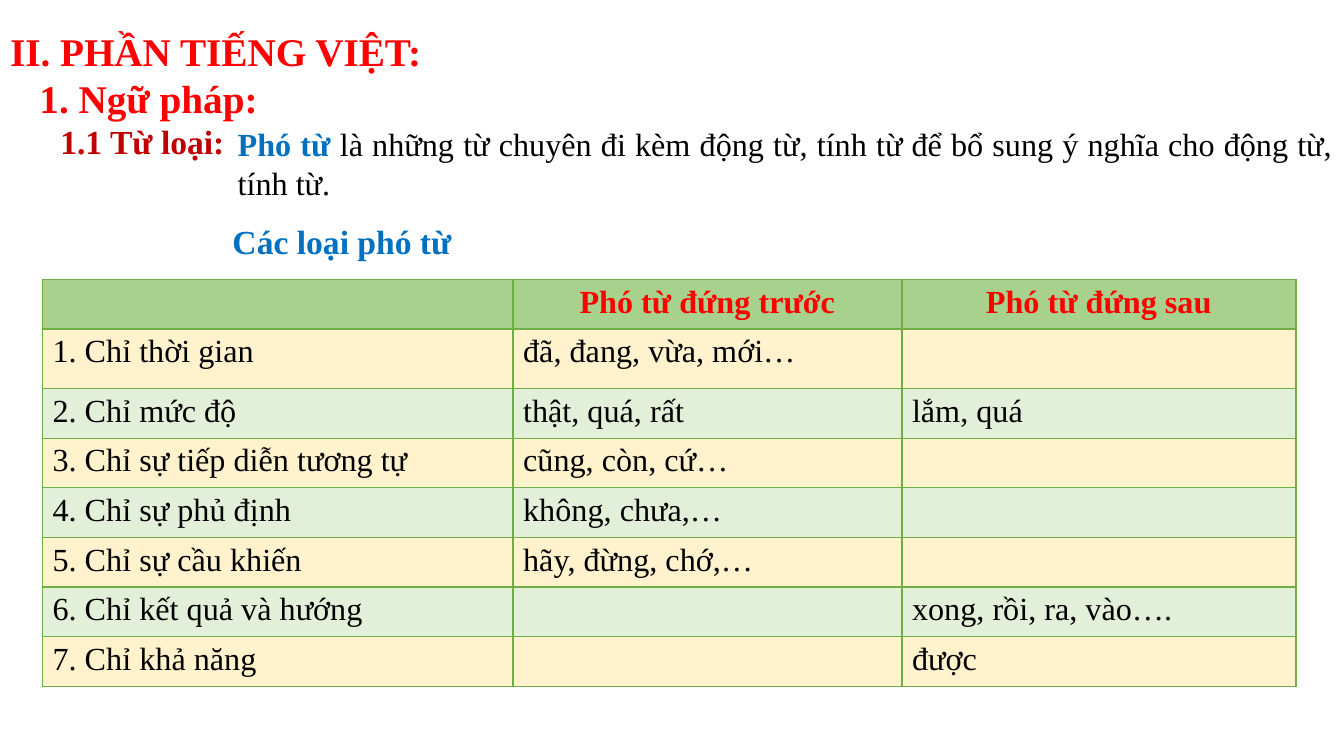
from dataclasses import dataclass

import pptx
import pptx.dml.color
import pptx.enum.text
import pptx.oxml.ns
import pptx.util
from lxml import etree
from pptx.util import Cm


@dataclass(frozen=True)
class Theme:
    font: str = "Times New Roman"
    red: str = "FF0000"
    dark_red: str = "C00000"
    blue: str = "0070C0"
    black: str = "000000"
    border: str = "70AD47"
    header_fill: str = "A9D18E"
    odd_fill: str = "FFF2CC"
    even_fill: str = "E2F0D9"
    title_size: int = 28
    heading_size: int = 24
    text_size: int = 23
    border_width: int = 1


THEME = Theme()
ALIGN = pptx.enum.text.PP_ALIGN


@dataclass(frozen=True)
class Span:
    text: str
    size: int
    color: str
    bold: bool = False


@dataclass(frozen=True)
class Label:
    left: float
    top: float
    width: float
    height: float
    spans: tuple[Span, ...]
    align: ALIGN = ALIGN.LEFT
    wrap: bool = True


LABELS = (
    Label(1.27, 2.92, 4.7, 1.27,
          (Span("1.1 Từ loại:", THEME.heading_size, THEME.dark_red, True),),
          wrap=False),
    Label(5.74, 3.02, 28.12, 2.24,
          (Span("Phó từ ", THEME.text_size, THEME.blue, True),
           Span("là những từ chuyên đi kèm động từ, tính từ để bổ sung ý nghĩa "
                "cho động từ, tính từ.", THEME.text_size, THEME.black)),
          align=ALIGN.JUSTIFY),
    Label(5.61, 5.44, 6.53, 1.27,
          (Span("Các loại phó từ", THEME.heading_size, THEME.blue, True),)),
)

COLUMN_WIDTHS = (11.86, 9.8, 9.93)
ROW_HEIGHT = 1.25
FIRST_KIND_HEIGHT = 1.5
ADVERB_ROWS = (
    ("", "Phó từ đứng trước", "Phó từ đứng sau"),
    ("1. Chỉ thời gian", "đã, đang, vừa, mới…", ""),
    ("2. Chỉ mức độ", "thật, quá, rất", "lắm, quá"),
    ("3. Chỉ sự tiếp diễn tương tự", "cũng, còn, cứ…", ""),
    ("4. Chỉ sự phủ định", "không, chưa,…", ""),
    ("5. Chỉ sự cầu khiến", "hãy, đừng, chớ,…", ""),
    ("6. Chỉ kết quả và hướng", "", "xong, rồi, ra, vào…."),
    ("7. Chỉ khả năng", "", "được"),
)


def rgb(color: str) -> pptx.dml.color.RGBColor:
    return pptx.dml.color.RGBColor.from_string(color)


def add_span(para, span: Span) -> None:
    run = para.add_run()
    run.text = span.text
    run.font.name = THEME.font
    run.font.size = pptx.util.Pt(span.size)
    run.font.bold = span.bold
    run.font.color.rgb = rgb(span.color)


def fill_title(title) -> None:
    title.left, title.top, title.width, title.height = Cm(0), Cm(0.56), Cm(13.44), Cm(5.05)
    frame = title.text_frame
    frame.auto_size = pptx.enum.text.MSO_AUTO_SIZE.NONE
    frame.vertical_anchor = pptx.enum.text.MSO_ANCHOR.TOP
    headings = (("II. PHẦN TIẾNG VIỆT:", 0), ("1. Ngữ pháp:", 0.74))
    for index, (text, indent) in enumerate(headings):
        para = frame.add_paragraph() if index else frame.paragraphs[0]
        para.alignment = ALIGN.LEFT
        para.line_spacing = 1.0
        para.space_before = pptx.util.Pt(0)
        properties = para._p.get_or_add_pPr()
        properties.set("marL", str(Cm(indent)))
        properties.set("indent", "0")
        add_span(para, Span(text, THEME.title_size, THEME.red, True))


def add_label(page, label: Label) -> None:
    box = page.shapes.add_textbox(
        Cm(label.left), Cm(label.top), Cm(label.width), Cm(label.height))
    box.text_frame.word_wrap = label.wrap
    para = box.text_frame.paragraphs[0]
    para.alignment = label.align
    for span in label.spans:
        add_span(para, span)


def add_borders(cell) -> None:
    qualified = pptx.oxml.ns.qn
    properties = cell._tc.get_or_add_tcPr()
    for position, side in enumerate(("lnL", "lnR", "lnT", "lnB")):
        line = etree.Element(qualified(f"a:{side}"),
                             w=str(pptx.util.Pt(THEME.border_width)))
        fill = etree.SubElement(line, qualified("a:solidFill"))
        etree.SubElement(fill, qualified("a:srgbClr"), val=THEME.border)
        properties.insert(position, line)


def row_fill(row_index: int) -> str:
    if row_index == 0:
        return THEME.header_fill
    return THEME.odd_fill if row_index % 2 else THEME.even_fill


def add_adverb_table(page) -> None:
    height = ROW_HEIGHT * (len(ADVERB_ROWS) - 1) + FIRST_KIND_HEIGHT
    table = page.shapes.add_table(
        len(ADVERB_ROWS), len(COLUMN_WIDTHS), Cm(1.07), Cm(7.04),
        Cm(sum(COLUMN_WIDTHS)), Cm(height)).table
    table.first_row = table.horz_banding = False
    for column, width in zip(table.columns, COLUMN_WIDTHS):
        column.width = Cm(width)
    for row_index, texts in enumerate(ADVERB_ROWS):
        is_header = row_index == 0
        table.rows[row_index].height = Cm(
            FIRST_KIND_HEIGHT if row_index == 1 else ROW_HEIGHT)
        for column_index, text in enumerate(texts):
            cell = table.cell(row_index, column_index)
            cell.fill.solid()
            cell.fill.fore_color.rgb = rgb(row_fill(row_index))
            add_borders(cell)
            if text:
                para = cell.text_frame.paragraphs[0]
                para.alignment = ALIGN.CENTER if is_header else ALIGN.LEFT
                color = THEME.red if is_header else THEME.black
                add_span(para, Span(text, THEME.text_size, color, is_header))


def main() -> None:
    deck = pptx.Presentation()
    deck.slide_width, deck.slide_height = Cm(33.87), Cm(19.05)
    page = deck.slides.add_slide(deck.slide_layouts.get_by_name("Title Only"))
    fill_title(page.shapes.title)
    for label in LABELS:
        add_label(page, label)
    add_adverb_table(page)
    deck.save("out.pptx")


if __name__ == "__main__":
    main()
